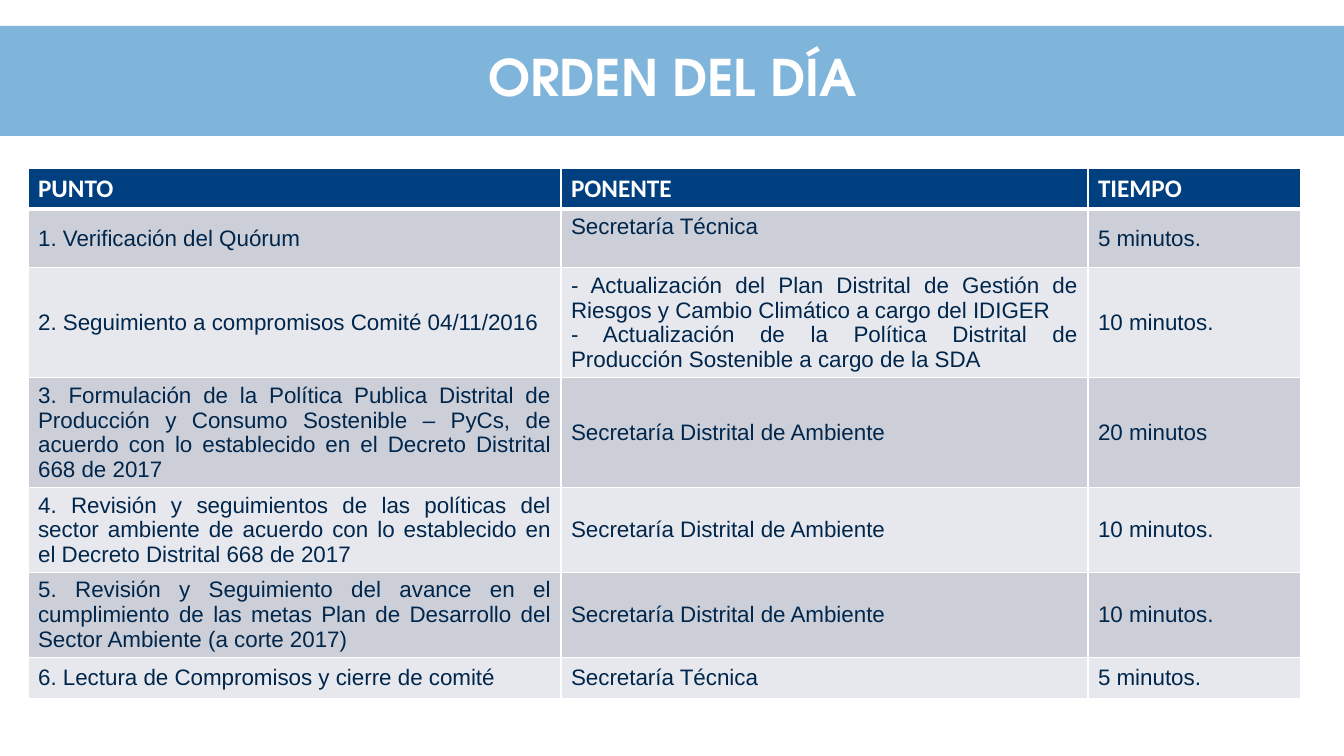
"""Build the agenda slide: a title band above a table of points, speakers and times."""
from lxml.etree import SubElement
from pptx import Presentation
from pptx.dml.color import RGBColor
from pptx.enum.shapes import MSO_SHAPE
from pptx.enum.text import MSO_ANCHOR, PP_ALIGN
from pptx.oxml.ns import qn
from pptx.util import Pt

TITLE = "ORDEN DEL DÍA"
HEADERS = ["PUNTO", "PONENTE", "TIEMPO"]
AGENDA = [
    ("1. Verificación del Quórum", "Secretaría Técnica", "5 minutos."),
    ("2. Seguimiento a compromisos Comité 04/11/2016",
     "- Actualización del Plan Distrital de Gestión de Riesgos y Cambio Climático "
     "a cargo del IDIGER\n"
     "- Actualización de la Política Distrital de Producción Sostenible a cargo de la SDA",
     "10 minutos."),
    ("3. Formulación de la Política Publica Distrital de Producción y Consumo Sostenible – "
     "PyCs, de acuerdo con lo establecido en el Decreto Distrital 668 de 2017",
     "Secretaría Distrital de Ambiente", "20 minutos"),
    ("4. Revisión y seguimientos de las políticas del sector ambiente de acuerdo con lo "
     "establecido en el Decreto Distrital 668 de 2017",
     "Secretaría Distrital de Ambiente", "10 minutos."),
    ("5. Revisión y Seguimiento del avance en el cumplimiento de las metas Plan de Desarrollo "
     "del Sector Ambiente (a corte 2017)",
     "Secretaría Distrital de Ambiente", "10 minutos."),
    ("6. Lectura de Compromisos y cierre de comité", "Secretaría Técnica", "5 minutos."),
]
COLORS = {"band": "1C7ABF", "header": "004080", "odd": "CCCFD8", "even": "E7E8ED",
          "text": "00264C", "white": "FFFFFF"}
BAND_OPACITY = 56
SLIDE_SIZE = (1344, 756)
BAND_BOX = (0, 26, 1344, 110)
TITLE_BOX = (93, 40, 1159, 80)
TABLE_ORIGIN = (28, 168)
COLUMN_WIDTHS = [533, 527, 213]
ROW_HEIGHTS = [40, 59, 110, 110, 85, 84, 41]
PIXELS_PER_INCH = 100.8


def px(length):
    """Turn pixels into EMU."""
    return round(length * 914400 / PIXELS_PER_INCH)


def color(name):
    """Return a named colour."""
    return RGBColor.from_string(COLORS[name])


def style(para, font_name, size, color_name, bold, align):
    """Align a paragraph and format its runs."""
    para.alignment = align
    for span in para.runs:
        span.font.name = font_name
        span.font.size = Pt(size)
        span.font.bold = bold
        span.font.color.rgb = color(color_name)


def add_borders(cell, widths):
    """Draw white borders, with widths in points by side."""
    properties = cell._tc.get_or_add_tcPr()
    for side, width in widths.items():
        line = SubElement(properties, qn(f"a:ln{side}"), w=str(Pt(width)))
        fill = SubElement(line, qn("a:solidFill"))
        SubElement(fill, qn("a:srgbClr"), val=COLORS["white"])


def add_title(page):
    """Format the title and place the translucent band behind it."""
    title = page.shapes.title
    title.left, title.top, title.width, title.height = map(px, TITLE_BOX)
    title.text_frame.text = TITLE
    title.text_frame.vertical_anchor = MSO_ANCHOR.MIDDLE
    para = title.text_frame.paragraphs[0]
    para.line_spacing = 0.9
    style(para, "TeX Gyre Adventor", 36, "white", True, PP_ALIGN.CENTER)

    band = page.shapes.add_shape(MSO_SHAPE.RECTANGLE, *map(px, BAND_BOX))
    band.shadow.inherit = False
    band.line.fill.background()
    band.fill.solid()
    band.fill.fore_color.rgb = color("band")
    tint = band._element.spPr.find(f"{qn('a:solidFill')}/{qn('a:srgbClr')}")
    SubElement(tint, qn("a:alpha"), val=str(BAND_OPACITY * 1000))
    title._element.addprevious(band._element)


def add_agenda(page):
    """Add the agenda table with its header and alternating rows."""
    rows = [HEADERS, *AGENDA]
    frame = page.shapes.add_table(
        len(rows), len(HEADERS), *map(px, TABLE_ORIGIN),
        px(sum(COLUMN_WIDTHS)), px(sum(ROW_HEIGHTS)))
    table = frame.table
    table.horz_banding = False
    for column, width in zip(table.columns, COLUMN_WIDTHS):
        column.width = px(width)
    for row, height in zip(table.rows, ROW_HEIGHTS):
        row.height = px(height)

    for row_index, texts in enumerate(rows):
        is_header = row_index == 0
        fill_name = "header" if is_header else ("even", "odd")[row_index % 2]
        widths = {"L": 1, "R": 1, "T": 3 if row_index == 1 else 1, "B": 3 if is_header else 1}
        for column_index, text in enumerate(texts):
            cell = table.cell(row_index, column_index)
            add_borders(cell, widths)
            cell.fill.solid()
            cell.fill.fore_color.rgb = color(fill_name)
            at_top = is_header or (row_index, column_index) == (1, 1)
            cell.vertical_anchor = MSO_ANCHOR.TOP if at_top else MSO_ANCHOR.MIDDLE
            cell.text_frame.text = text
            for para in cell.text_frame.paragraphs:
                if is_header:
                    style(para, "Calibri", 18, "white", True, PP_ALIGN.LEFT)
                else:
                    style(para, "Arial", 16, "text", False, PP_ALIGN.JUSTIFY)


def main():
    """Create and save the deck."""
    deck = Presentation()
    deck.slide_width, deck.slide_height = map(px, SLIDE_SIZE)
    page = deck.slides.add_slide(deck.slide_layouts[5])
    add_title(page)
    add_agenda(page)
    deck.save("out.pptx")


if __name__ == "__main__":
    main()
